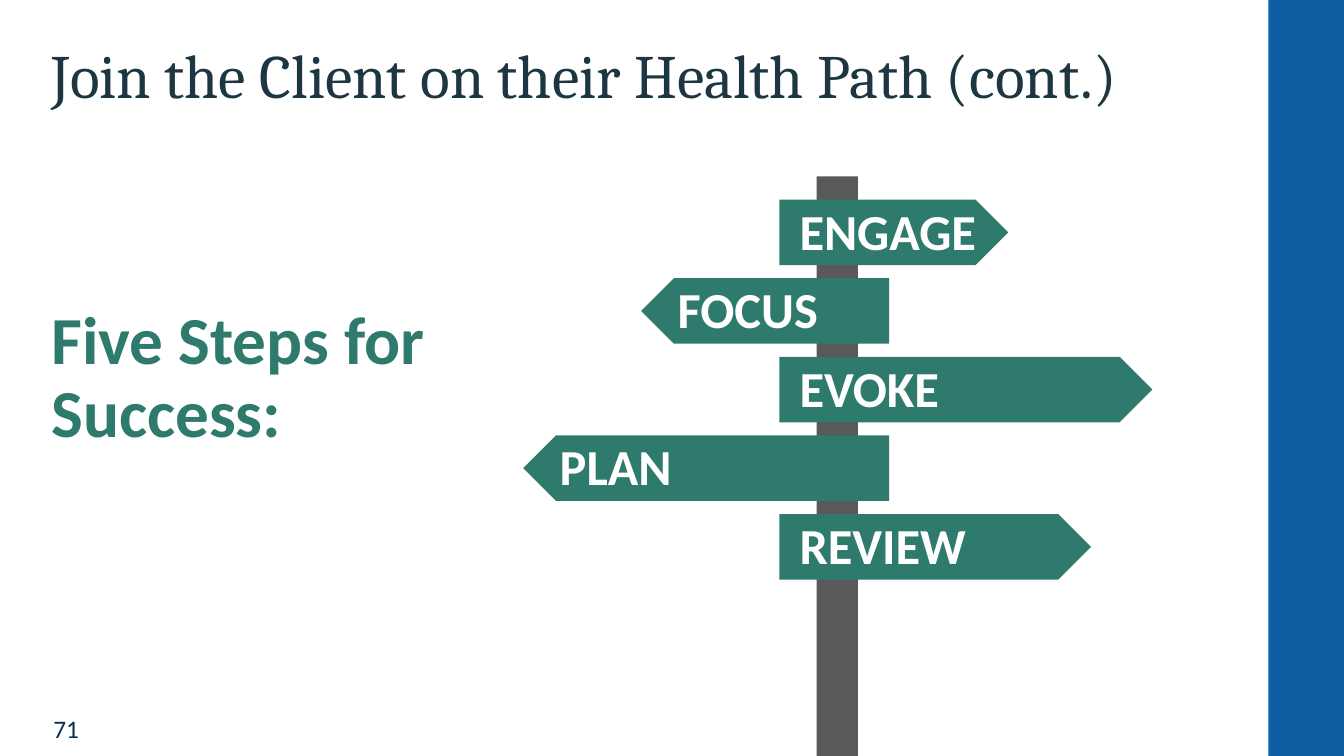
from pptx import Presentation
from pptx.dml.color import RGBColor
from pptx.enum.shapes import MSO_SHAPE
from pptx.enum.text import MSO_ANCHOR, MSO_AUTO_SIZE, PP_ALIGN
from pptx.util import Inches, Pt

BLUE = RGBColor(0x0F, 0x5D, 0xA3)
NAVY = RGBColor(0x08, 0x2E, 0x52)
INK = RGBColor(0x1D, 0x36, 0x41)
GREEN = RGBColor(0x2E, 0x7A, 0x6D)
GREY = RGBColor(0x59, 0x59, 0x59)
WHITE = RGBColor(0xFF, 0xFF, 0xFF)


def write(shape, text, size, color, font="Calibri", bold=False,
          anchor=MSO_ANCHOR.TOP, inset=(0, 0, 0, 0), line=1.0):
    frame = shape.text_frame
    frame.word_wrap = True
    frame.auto_size = MSO_AUTO_SIZE.NONE
    frame.vertical_anchor = anchor
    (frame.margin_left, frame.margin_top,
     frame.margin_right, frame.margin_bottom) = map(Inches, inset)
    frame.text = text
    par = frame.paragraphs[0]
    par.alignment = PP_ALIGN.LEFT
    par.line_spacing = line
    par.space_before = Pt(0)
    par.font.name = font
    par.font.size = Pt(size)
    par.font.bold = bold
    par.font.color.rgb = color


def block(kind, left, top, width, height, fill):
    shape = slide.shapes.add_shape(
        kind, Inches(left), Inches(top), Inches(width), Inches(height))
    shape.shadow.inherit = False
    shape.fill.solid()
    shape.fill.fore_color.rgb = fill
    shape.line.fill.background()
    return shape


deck = Presentation()
deck.slide_width, deck.slide_height = Inches(13.33), Inches(7.5)
slide = deck.slides.add_slide(deck.slide_layouts[5])

# Side band and page number
block(MSO_SHAPE.RECTANGLE, 12.58, 0, 0.75, 7.5, BLUE)
page = slide.shapes.add_textbox(
    Inches(0.53), Inches(7.01), Inches(0.73), Inches(0.43))
write(page, "71", 18, NAVY, anchor=MSO_ANCHOR.MIDDLE)

# Title
title = slide.shapes.title
title.left, title.top = Inches(0.51), Inches(0.45)
title.width, title.height = Inches(11.5), Inches(0.91)
write(title, "Join the Client on their Health Path (cont.)", 44, INK,
      font="Cambria", line=0.9)

# Lead text
lead = slide.shapes.add_textbox(
    Inches(0.51), Inches(3.04), Inches(3.94), Inches(3.47))
write(lead, "Five Steps for Success:", 48, GREEN, bold=True, line=0.9)

# Signpost: signs point right and left in turn
block(MSO_SHAPE.RECTANGLE, 8.1, 1.75, 0.41, 5.75, GREY)
START, END = 7.73, 8.82
signs = [("ENGAGE", 2.27), ("FOCUS", 2.46), ("EVOKE", 3.7),
         ("PLAN", 3.63), ("REVIEW", 3.09)]
for row, (step, width) in enumerate(signs):
    flip = row % 2 == 1
    left = END - width if flip else START
    sign = block(MSO_SHAPE.PENTAGON, left, 1.98 + row * 0.78,
                 width, 0.65, GREEN)
    if flip:
        sign._element.spPr.xfrm.set("flipH", "1")
    write(sign, step, 36, WHITE, bold=True, anchor=MSO_ANCHOR.MIDDLE,
          inset=(0.2, 0, 0.1, 0.05))

deck.save("out.pptx")
